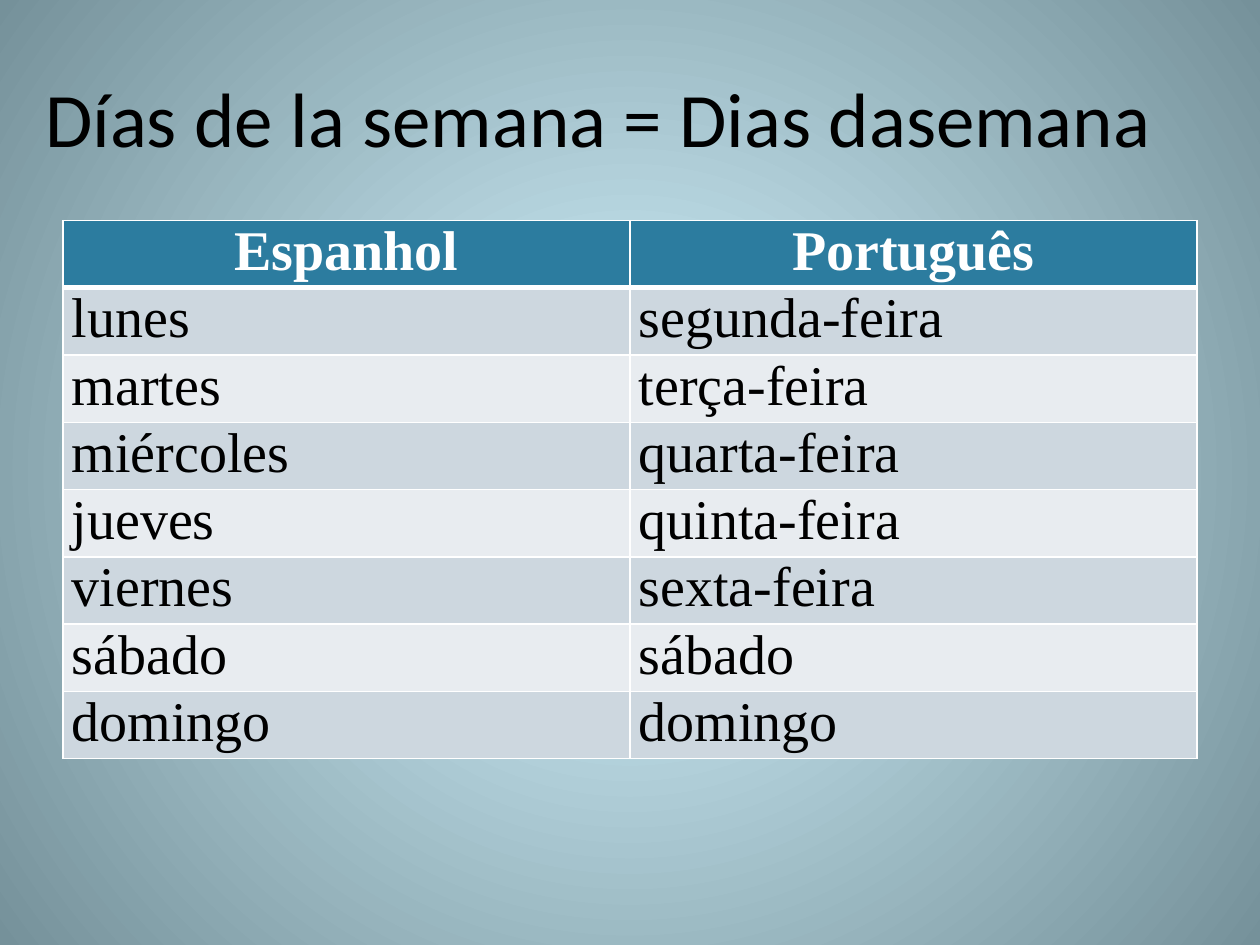
from lxml import etree
from pptx import Presentation
from pptx.dml.color import RGBColor
from pptx.enum.text import MSO_ANCHOR as Anchor, PP_ALIGN as Align
from pptx.oxml import parse_xml
from pptx.oxml.ns import nsdecls, qn
from pptx.util import Inches, Pt

WEEKDAYS = [
    ("Espanhol", "Português"),
    ("lunes", "segunda-feira"),
    ("martes", "terça-feira"),
    ("miércoles", "quarta-feira"),
    ("jueves", "quinta-feira"),
    ("viernes", "sexta-feira"),
    ("sábado", "sábado"),
    ("domingo", "domingo"),
]
HEADER_FILL, BAND_FILLS = "2C7C9F", ("E8ECF0", "CDD7DF")
ROW_HEIGHT = 0.49


def color(hex_string):
    return RGBColor.from_string(hex_string)


def add_border(cell, side, width):
    """Draw a white line on one side of a cell: L, R, T or B."""
    properties = cell._tc.get_or_add_tcPr()
    line = etree.SubElement(properties, qn(f"a:ln{side}"), w=str(Pt(width)))
    fill = etree.SubElement(line, qn("a:solidFill"))
    etree.SubElement(fill, qn("a:srgbClr"), val="FFFFFF")


presentation = Presentation()
presentation.slide_width, presentation.slide_height = Inches(10), Inches(7.5)
slide = presentation.slides.add_slide(presentation.slide_layouts[6])

# Radial background, light in the centre
background = slide.background.fill
background.gradient()
for stop, hex_string in zip(background.gradient_stops, ("D5F5FF", "75919A")):
    stop.color.rgb = color(hex_string)
linear = next(slide.background._cSld.iter(qn("a:lin")))
linear.getparent().replace(linear, parse_xml(
    f'<a:path {nsdecls("a")} path="circle">'
    '<a:fillToRect l="50000" t="50000" r="50000" b="50000"/></a:path>'))

# Title
title = slide.shapes.add_textbox(Inches(0), Inches(0.3), Inches(9.5), Inches(1.25))
title.text_frame.word_wrap = True
title.text_frame.vertical_anchor = Anchor.MIDDLE
paragraph = title.text_frame.paragraphs[0]
paragraph.text = "Días de la semana = Dias dasemana"
paragraph.alignment = Align.CENTER
title_format = {"name": "Calibri", "size": Pt(44)}
for attribute, value in title_format.items():
    setattr(paragraph.font, attribute, value)
paragraph.font.color.rgb = color("000000")

# Table of weekdays
table = slide.shapes.add_table(
    len(WEEKDAYS), 2, Inches(0.5), Inches(1.75),
    Inches(9), Inches(ROW_HEIGHT * len(WEEKDAYS))).table
cell_format = {"margin_left": Inches(0.07), "margin_right": Inches(0.07),
               "margin_top": 0, "margin_bottom": 0}

for row, words in enumerate(WEEKDAYS):
    is_header = row == 0
    for column, word in enumerate(words):
        cell = table.cell(row, column)
        for attribute, value in cell_format.items():
            setattr(cell, attribute, value)
        for side in "LRTB":
            thick = (is_header and side == "B") or (row == 1 and side == "T")
            add_border(cell, side, 3 if thick else 1)
        cell.fill.solid()
        cell.fill.fore_color.rgb = color(HEADER_FILL if is_header else BAND_FILLS[row % 2])

        paragraph = cell.text_frame.paragraphs[0]
        paragraph.text = word
        paragraph.alignment = Align.CENTER if is_header else Align.LEFT
        word_format = {"name": "Times New Roman", "size": Pt(32), "bold": is_header}
        for attribute, value in word_format.items():
            setattr(paragraph.font, attribute, value)
        paragraph.font.color.rgb = color("FFFFFF" if is_header else "000000")

presentation.save("out.pptx")
